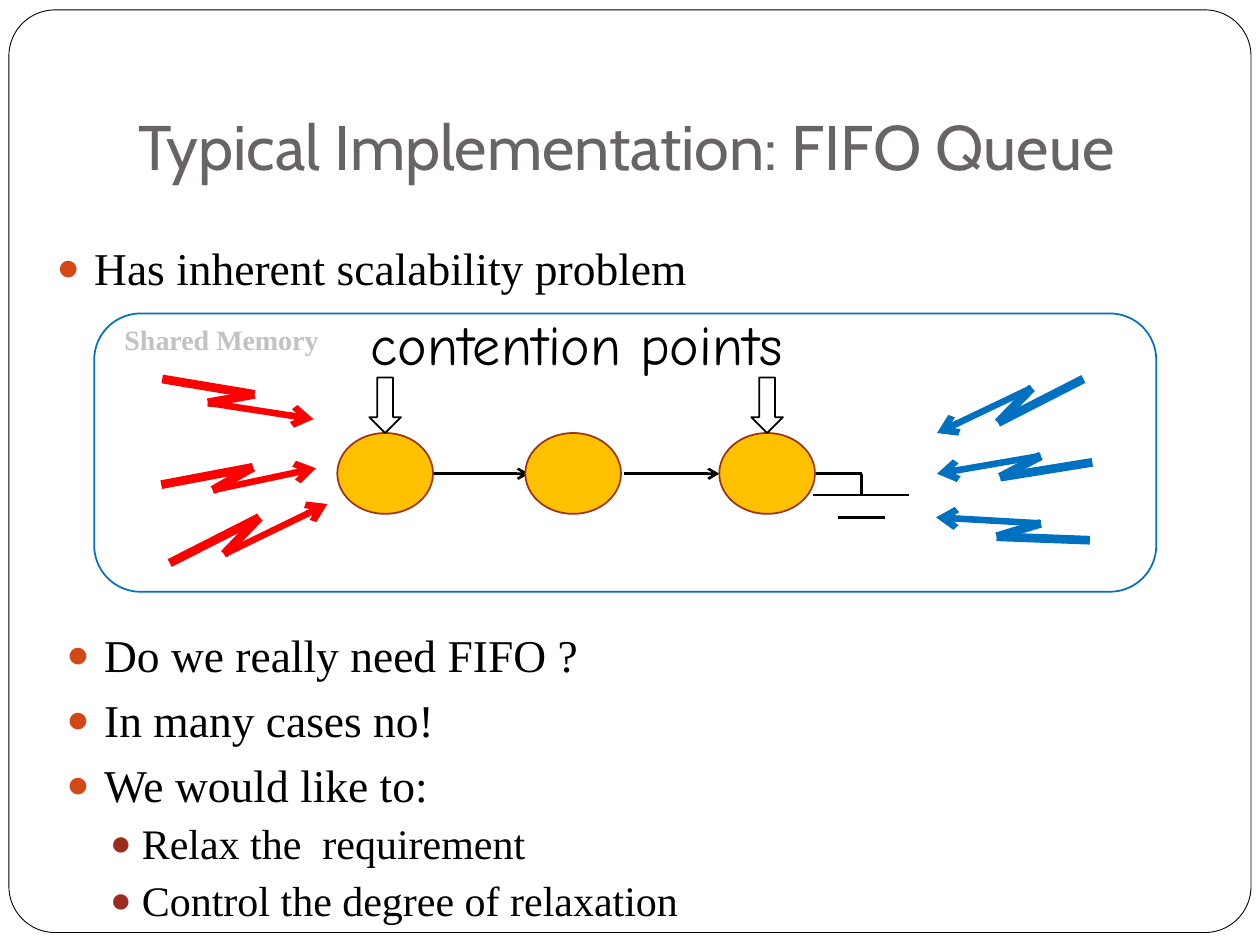
from lxml import etree
from pptx import Presentation
from pptx.dml.color import RGBColor
from pptx.enum.shapes import MSO_CONNECTOR, MSO_SHAPE
from pptx.enum.text import MSO_ANCHOR, PP_ALIGN
from pptx.oxml.ns import qn
from pptx.util import Cm, Pt

STRAIGHT = MSO_CONNECTOR.STRAIGHT
ROUNDED, OVAL, DOWN_ARROW = (MSO_SHAPE.ROUNDED_RECTANGLE, MSO_SHAPE.OVAL,
                             MSO_SHAPE.DOWN_ARROW)
BOTTOM, TOP = MSO_ANCHOR.BOTTOM, MSO_ANCHOR.TOP
LEFT, CENTER = PP_ALIGN.LEFT, PP_ALIGN.CENTER

BLACK = RGBColor(0x00, 0x00, 0x00)
WHITE = RGBColor(0xFF, 0xFF, 0xFF)
TITLE_GREY = RGBColor(0x69, 0x64, 0x64)
LABEL_GREY = RGBColor(0xC3, 0xC1, 0xC1)
ORANGE = RGBColor(0xD3, 0x48, 0x17)
BROWN = RGBColor(0x9B, 0x2D, 0x1F)
NODE_FILL = RGBColor(0xFF, 0xC0, 0x00)
NODE_EDGE = RGBColor(0x9C, 0x35, 0x11)
RED = RGBColor(0xFF, 0x00, 0x00)
BLUE = RGBColor(0x00, 0x70, 0xC0)

SERIF = "Times New Roman"

# Per outline level: text size, space before, left margin, hanging indent, bullet colour
LEVELS = [(26, 5.8, 0.76, 0.76, ORANGE), (24, 3.7, 1.52, 0.64, BROWN)]

NODE_W, NODE_H, NODE_TOP = 1.93, 1.63, 2.41
NODE_LEFTS = [4.9, 8.69, 12.6]
LINK_STARTS = [6.83, 10.67]
LINK_Y = 3.23
POINTER_W, POINTER_H = 0.64, 1.12
GROUND = [((14.5, 3.23), (15.47, 3.23)), ((15.47, 3.23), (15.47, 3.66)),
          ((14.5, 3.66), (16.43, 3.66)), ((14.99, 4.11), (15.95, 4.11))]

# Each bolt: start, corner, notch, tip
ENQUEUE_BOLTS = [
    ((1.37, 1.32), (3.23, 1.63), (2.29, 1.8), (4.42, 2.13)),
    ((1.35, 3.45), (3.2, 3.1), (2.39, 3.56), (4.47, 3.12)),
    ((1.52, 5.03), (3.33, 4.11), (2.62, 4.85), (4.7, 3.84)),
]
DEQUEUE_BOLTS = [
    ((19.94, 1.32), (18.22, 2.2), (18.9, 1.5), (16.99, 2.41)),
    ((20.12, 3.0), (18.26, 3.3), (19.08, 2.87), (16.99, 3.23)),
    ((20.07, 4.57), (18.19, 4.5), (19.08, 4.23), (16.97, 4.11)),
]


def add_outline(slide, preset, box, fill, edge, width=1):
    outline = slide.shapes.add_shape(preset, *map(Cm, box))
    outline.shadow.inherit = False
    if fill is None:
        outline.fill.background()
    else:
        outline.fill.solid()
        outline.fill.fore_color.rgb = fill
    outline.line.color.rgb = edge
    outline.line.width = Pt(width)
    return outline


def add_line(slide, start, end, color, width, arrow=False):
    line = slide.shapes.add_connector(STRAIGHT, *map(Cm, (*start, *end)))
    line.line.color.rgb = color
    line.line.width = Pt(width)
    properties = line._element.spPr
    if arrow:
        etree.SubElement(properties.find(qn("a:ln")), qn("a:tailEnd"), type="arrow")
    etree.SubElement(properties, qn("a:effectLst"))


def add_text_frame(slide, box, wrap=True, anchor=TOP):
    frame = slide.shapes.add_textbox(*map(Cm, box)).text_frame
    frame.word_wrap = wrap
    frame.vertical_anchor = anchor
    return frame


def style(paragraph, size, font, color, bold=False, align=LEFT):
    paragraph.alignment = align
    paragraph.font.size = Pt(size)
    paragraph.font.name = font
    paragraph.font.color.rgb = color
    paragraph.font.bold = bold


def add_title(slide, box, text):
    frame = add_text_frame(slide, box, anchor=BOTTOM)
    frame.margin_bottom = Cm(0.25)
    frame.text = text
    style(frame.paragraphs[0], 36, "Cabin", TITLE_GREY)


def add_bullets(slide, box, items):
    """Write (level, text) items as a bulleted outline."""
    frame = add_text_frame(slide, box)
    frame.text = "\n".join(text for _, text in items)
    for paragraph, (level, _) in zip(frame.paragraphs, items):
        size, before, margin, hanging, color = LEVELS[level]
        paragraph.level = level
        paragraph.space_before = Pt(before)
        style(paragraph, size, SERIF, BLACK)
        properties = paragraph._p.get_or_add_pPr()
        properties.set("marL", str(Cm(margin)))
        properties.set("indent", str(-Cm(hanging)))
        # Bullet settings must stand before the run defaults
        defaults = properties.find(qn("a:defRPr"))
        bullet_color = etree.Element(qn("a:buClr"))
        etree.SubElement(bullet_color, qn("a:srgbClr"), val=str(color))
        for part in (bullet_color,
                     etree.Element(qn("a:buSzPct"), val="85000"),
                     etree.Element(qn("a:buFont"), typeface="Arial"),
                     etree.Element(qn("a:buChar"), char="●")):
            defaults.addprevious(part)


def add_bolt(slide, points, color):
    start, corner, notch, tip = points
    add_line(slide, start, corner, color, 5)
    add_line(slide, notch, corner, color, 5)
    add_line(slide, notch, tip, color, 3.75, arrow=True)


def add_queue_diagram(slide, box):
    """Draw the linked queue with its contention points inside shared memory."""
    left, top, width, height = box

    def at(point):
        return left + point[0], top + point[1]

    add_outline(slide, ROUNDED, box, WHITE, BLUE)
    for x in LINK_STARTS:
        add_line(slide, at((x, LINK_Y)), at((x + NODE_W, LINK_Y)), BLACK, 1.5, arrow=True)
    for start, end in GROUND:
        add_line(slide, at(start), at(end), BLACK, 1.5)
    for x in NODE_LEFTS:
        add_outline(slide, OVAL, (*at((x, NODE_TOP)), NODE_W, NODE_H), NODE_FILL, NODE_EDGE)
    for x in (NODE_LEFTS[0], NODE_LEFTS[-1]):
        corner = at((x + (NODE_W - POINTER_W) / 2, NODE_TOP - POINTER_H))
        add_outline(slide, DOWN_ARROW, (*corner, POINTER_W, POINTER_H), None, BLACK)

    for bolts, color in ((ENQUEUE_BOLTS, RED), (DEQUEUE_BOLTS, BLUE)):
        for bolt in bolts:
            add_bolt(slide, [at(point) for point in bolt], color)

    contention = add_text_frame(slide, (*at((5.26, -0.2)), 8.94, 1.57), wrap=False)
    contention.text = "contention points"
    style(contention.paragraphs[0], 32, "Comic Neue", BLACK, align=CENTER)
    memory = add_text_frame(slide, (*at((0.36, 0.05)), 4.62, 0.91))
    memory.text = "Shared Memory"
    style(memory.paragraphs[0], 16, SERIF, LABEL_GREY, bold=True)


def main():
    deck = Presentation()
    deck.slide_width, deck.slide_height = Cm(25.4), Cm(19.05)
    slide = deck.slides.add_slide(deck.slide_layouts[6])

    frame = add_outline(slide, ROUNDED, (0.18, 0.2, 25.04, 18.6), WHITE, BLACK, 0.5)
    frame.adjustments[0] = 0.05
    add_title(slide, (2.54, 0.76, 21.59, 3.18), "Typical Implementation: FIFO Queue")
    add_bullets(slide, (0.89, 4.72, 22.4, 3.2), [(0, "Has inherent scalability problem")])
    add_bullets(slide, (1.09, 12.52, 23.01, 5.79), [
        (0, "Do we really need FIFO ?"),
        (0, "In many cases no!"),
        (0, "We would like to:"),
        (1, "Relax the  requirement"),
        (1, "Control the degree of relaxation"),
    ])
    add_queue_diagram(slide, (1.9, 6.32, 21.41, 5.61))
    deck.save("out.pptx")


if __name__ == "__main__":
    main()
